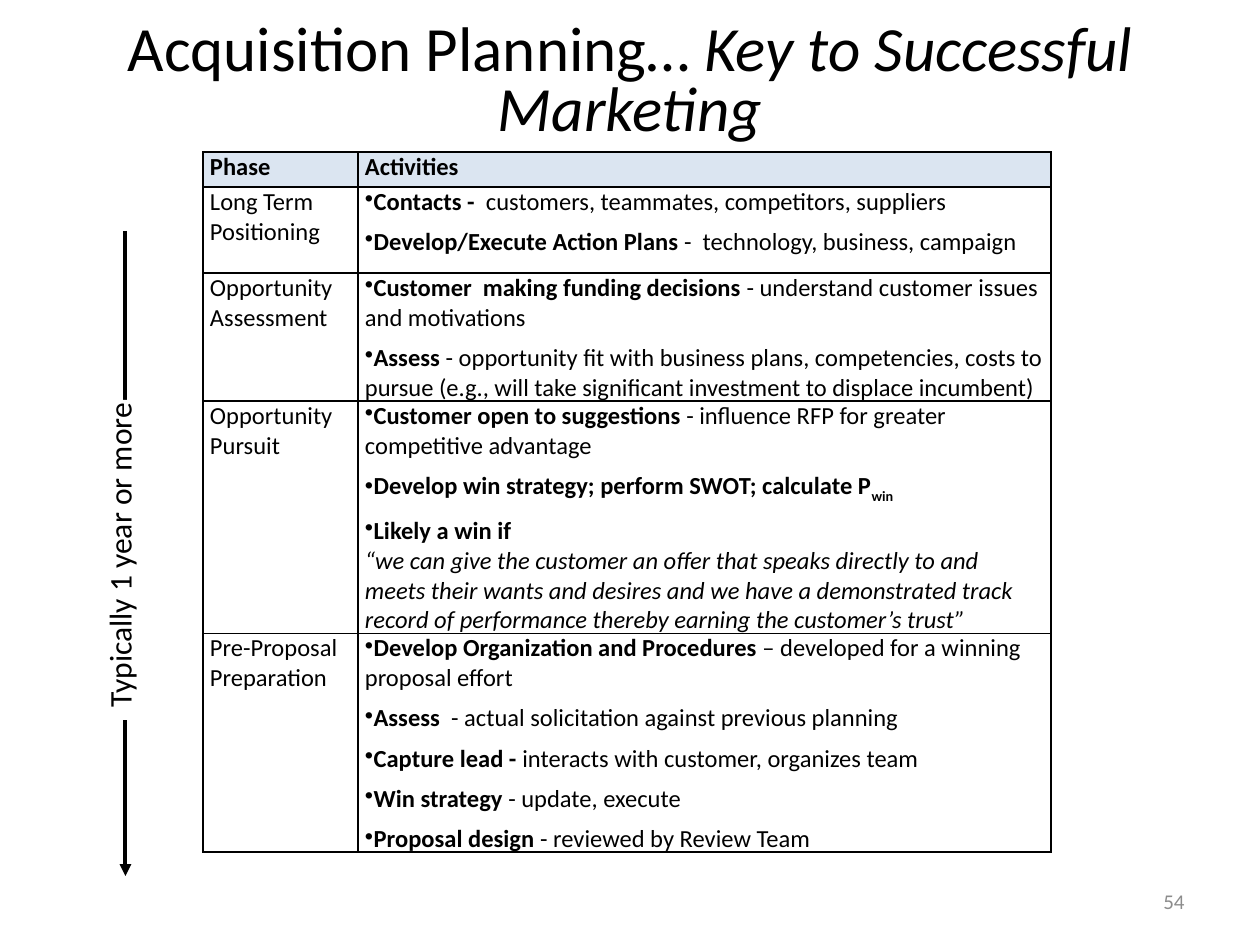
import pptx
import pptx.util
import pptx.dml.color
import pptx.enum.shapes
import pptx.enum.text
import pptx.oxml.ns
from lxml import etree

EMU_PER_PX = 914400 / 126
BLACK = pptx.dml.color.RGBColor(0x00, 0x00, 0x00)
WHITE = pptx.dml.color.RGBColor(0xFF, 0xFF, 0xFF)
GRAY = pptx.dml.color.RGBColor(0x8C, 0x8C, 0x8C)
PALE_BLUE = pptx.dml.color.RGBColor(0xDB, 0xE5, 0xF1)
FONT = "Calibri"
ANCHOR = pptx.enum.text.MSO_ANCHOR
ALIGN = pptx.enum.text.PP_ALIGN

HEADINGS = ("Phase", "Activities")
COLUMN_WIDTHS = (155, 693)
ROW_HEIGHTS = (35, 86, 112, 199, 192)
WIN_QUOTE = ("“we can give the customer an offer that speaks directly to and meets "
             "their wants and desires and we have a demonstrated track record of "
             "performance thereby earning the customer’s trust”")
# Each activity is a bold lead and a list of (text, style) pieces after it.
PHASES = [
    ("Long Term Positioning", [
        ("Contacts -  ", "customers, teammates, competitors, suppliers", "plain"),
        ("Develop/Execute Action Plans", " -  technology, business, campaign", "plain"),
    ]),
    ("Opportunity Assessment", [
        ("Customer  making funding decisions ",
         "- understand customer issues and motivations", "plain"),
        ("Assess ", "- opportunity fit with business plans, competencies, costs to pursue "
         "(e.g., will take significant investment to displace incumbent)", "plain"),
    ]),
    ("Opportunity Pursuit", [
        ("Customer open to suggestions ",
         "- influence RFP for greater competitive advantage", "plain"),
        ("Develop win strategy; perform SWOT; calculate P", "win", "subscript"),
        ("Likely a win if ", WIN_QUOTE, "quote"),
    ]),
    ("Pre-Proposal Preparation", [
        ("Develop Organization and Procedures ",
         "– developed for a winning proposal effort", "plain"),
        ("Assess ", " - actual solicitation against previous planning", "plain"),
        ("Capture lead - ", "interacts with customer, organizes team", "plain"),
        ("Win strategy ", "- update, execute", "plain"),
        ("Proposal design ", "- reviewed by Review Team", "plain"),
    ]),
]


def px(length):
    return pptx.util.Emu(round(length * EMU_PER_PX))


def add_xml(parent, tag, **attributes):
    return etree.SubElement(parent, pptx.oxml.ns.qn(tag), attributes)


def format_run(run, size, color=BLACK, bold=False, italic=False):
    run.font.name = FONT
    run.font.size = pptx.util.Pt(size)
    run.font.color.rgb = color
    run.font.bold = bold
    run.font.italic = italic


def add_run(paragraph, text, size, **style):
    run = paragraph.add_run()
    run.text = text
    format_run(run, size, **style)
    return run


def add_title(slide, left, top, width, height):
    title = slide.shapes.title
    title.left, title.top, title.width, title.height = map(px, (left, top, width, height))
    title.text_frame.vertical_anchor = ANCHOR.MIDDLE
    heading = title.text_frame.paragraphs[0]
    heading.alignment = ALIGN.CENTER
    heading.line_spacing = 0.8
    add_run(heading, "Acquisition Planning… ", 36)
    add_run(heading, "Key to Successful Marketing", 36, italic=True)


def add_page_number(slide, left, top, width, height):
    number = slide.shapes.add_textbox(*map(px, (left, top, width, height))).text_frame
    number.word_wrap = True
    number.vertical_anchor = ANCHOR.MIDDLE
    number.text = "54"
    number.paragraphs[0].alignment = ALIGN.RIGHT
    format_run(number.paragraphs[0].runs[0], 12, GRAY)


def style_cell(cell, fill=None):
    cell.margin_left = cell.margin_right = px(7)
    cell.margin_top = cell.margin_bottom = 0
    properties = cell._tc.get_or_add_tcPr()
    for side in ("a:lnL", "a:lnR", "a:lnT", "a:lnB"):
        border = add_xml(properties, side, w=str(pptx.util.Pt(1)))
        add_xml(add_xml(border, "a:solidFill"), "a:srgbClr", val=str(BLACK))
    if fill is None:
        cell.fill.background()
    else:
        cell.fill.solid()
        cell.fill.fore_color.rgb = fill


def write_label(cell, text, bold=False):
    cell.text_frame.text = text
    format_run(cell.text_frame.paragraphs[0].runs[0], 14, bold=bold)


def write_activity(paragraph, lead, detail, kind):
    paragraph.space_after = pptx.util.Pt(6)
    properties = paragraph._p.get_or_add_pPr()
    properties.set("marL", "0")
    properties.set("indent", str(-px(13)))
    add_xml(properties, "a:buChar", char="•")
    add_run(paragraph, lead, 14, bold=True)
    if kind == "quote":
        paragraph.add_line_break()
    run = add_run(paragraph, detail, 14, bold=kind == "subscript", italic=kind == "quote")
    if kind == "subscript":
        run.font._element.set("baseline", "-30000")


def add_phase_table(slide, left, top):
    box = (left, top, sum(COLUMN_WIDTHS), sum(ROW_HEIGHTS))
    table = slide.shapes.add_table(len(ROW_HEIGHTS), len(COLUMN_WIDTHS), *map(px, box)).table
    table.first_row = table.horz_banding = False
    for column, width in zip(table.columns, COLUMN_WIDTHS):
        column.width = px(width)
    for row, height in zip(table.rows, ROW_HEIGHTS):
        row.height = px(height)
    for column, heading in enumerate(HEADINGS):
        style_cell(table.cell(0, column), PALE_BLUE)
        write_label(table.cell(0, column), heading, bold=True)
    for row, (phase, activities) in enumerate(PHASES, start=1):
        phase_cell, activity_cell = table.cell(row, 0), table.cell(row, 1)
        style_cell(phase_cell)
        style_cell(activity_cell)
        write_label(phase_cell, phase)
        frame = activity_cell.text_frame
        for index, activity in enumerate(activities):
            paragraph = frame.add_paragraph() if index else frame.paragraphs[0]
            write_activity(paragraph, *activity)


def add_timeline(slide, left, top, width, height):
    """Downward arrow with its duration label set over the middle."""
    center = left + width / 2
    arrow = slide.shapes.add_connector(
        pptx.enum.shapes.MSO_CONNECTOR.STRAIGHT,
        *map(px, (center, top, center, top + height)))
    arrow.line.color.rgb = BLACK
    arrow.line.width = pptx.util.Pt(2.25)
    add_xml(arrow.line._get_or_add_ln(), "a:tailEnd", type="triangle")
    add_xml(arrow._element.spPr, "a:effectLst")

    duration = slide.shapes.add_shape(
        pptx.enum.shapes.MSO_SHAPE.RECTANGLE,
        *map(px, (left, top + 169, width, 320)))
    duration.shadow.inherit = False
    duration.fill.solid()
    duration.fill.fore_color.rgb = WHITE
    duration.line.fill.background()
    frame = duration.text_frame
    frame.text = "Typically 1 year or more"
    frame.word_wrap = False
    frame.auto_size = pptx.enum.text.MSO_AUTO_SIZE.SHAPE_TO_FIT_TEXT
    frame.vertical_anchor = ANCHOR.TOP
    frame._txBody.bodyPr.set("vert", "vert270")
    frame.paragraphs[0].alignment = ALIGN.LEFT
    format_run(frame.paragraphs[0].runs[0], 18)


def main():
    presentation = pptx.Presentation()
    presentation.slide_width, presentation.slide_height = px(1260), px(945)
    slide = presentation.slides.add_slide(presentation.slide_layouts.get_by_name("Title Only"))
    add_title(slide, 63, 5, 1134, 157)
    add_page_number(slide, 903, 876, 294, 50)
    add_phase_table(slide, 203, 152)
    add_timeline(slide, 94, 231, 63, 645)
    presentation.save("out.pptx")


if __name__ == "__main__":
    main()
